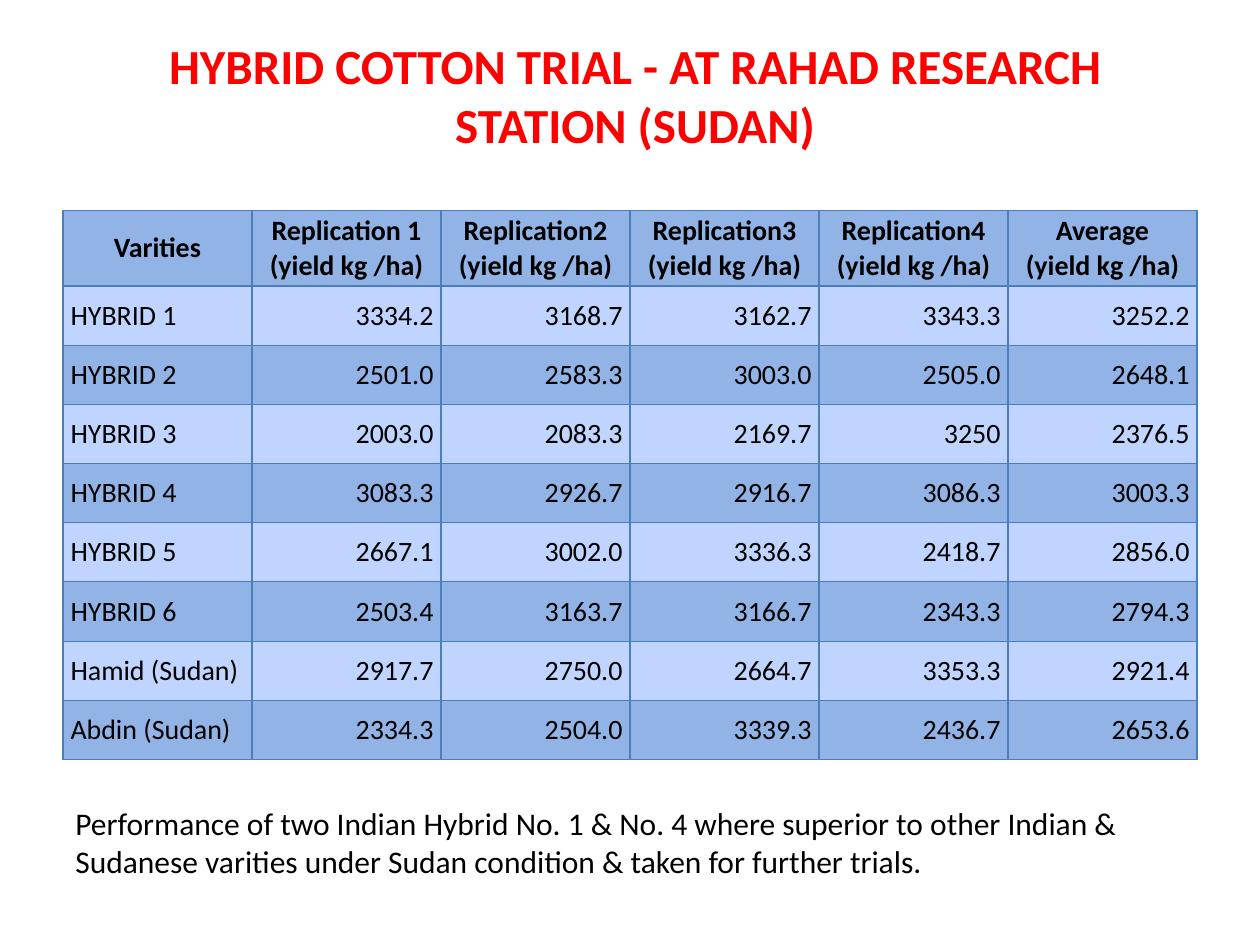
from lxml.etree import SubElement
from pptx import Presentation
from pptx.dml.color import RGBColor
from pptx.enum.text import MSO_ANCHOR as Anchor, MSO_AUTO_SIZE as AutoSize, PP_ALIGN as Align
from pptx.oxml.ns import qn
from pptx.util import Inches, Pt

TITLE = "HYBRID COTTON TRIAL - AT RAHAD RESEARCH STATION (SUDAN)"
CONCLUSION = (
    "Performance of two Indian Hybrid No. 1 & No. 4 where superior to other Indian & "
    "Sudanese varities under Sudan condition & taken for further trials."
)
UNIT = "(yield kg /ha)"
MEASURES = ["Replication 1", "Replication2", "Replication3", "Replication4", "Average"]
HEADER = ["Varities"] + [f"{measure}\v{UNIT}" for measure in MEASURES]
YIELDS = [
    ("HYBRID 1", "3334.2", "3168.7", "3162.7", "3343.3", "3252.2"),
    ("HYBRID 2", "2501.0", "2583.3", "3003.0", "2505.0", "2648.1"),
    ("HYBRID 3", "2003.0", "2083.3", "2169.7", "3250", "2376.5"),
    ("HYBRID 4", "3083.3", "2926.7", "2916.7", "3086.3", "3003.3"),
    ("HYBRID 5", "2667.1", "3002.0", "3336.3", "2418.7", "2856.0"),
    ("HYBRID 6", "2503.4", "3163.7", "3166.7", "2343.3", "2794.3"),
    ("Hamid (Sudan)", "2917.7", "2750.0", "2664.7", "3353.3", "2921.4"),
    ("Abdin (Sudan)", "2334.3", "2504.0", "3339.3", "2436.7", "2653.6"),
]
BLACK, RED, BORDER = "000000", "FF0000", "4B7EBC"
BANDS = ["92B3E5", "BFD5FF"]
HEADER_HEIGHT, ROW_HEIGHT, COLUMN_WIDTH = 0.6, 0.47, 1.5


def set_paragraph(paragraph, size, color, bold=False, align=Align.LEFT):
    paragraph.alignment = align
    font = paragraph.font
    font.name, font.size, font.bold = "Calibri", Pt(size), bold
    font.color.rgb = RGBColor.from_string(color)


def add_borders(cell):
    properties = cell._tc.get_or_add_tcPr()
    for side in ("a:lnL", "a:lnR", "a:lnT", "a:lnB"):
        line = SubElement(properties, qn(side), w=str(Pt(0.75)))
        SubElement(SubElement(line, qn("a:solidFill")), qn("a:srgbClr"), val=BORDER)


def add_yield_table(slide):
    rows = [HEADER] + YIELDS
    heights = [HEADER_HEIGHT] + [ROW_HEIGHT] * len(YIELDS)
    table = slide.shapes.add_table(
        len(rows), len(HEADER), Inches(0.5), Inches(1.67),
        Inches(COLUMN_WIDTH * len(HEADER)), Inches(sum(heights)),
    ).table
    for column in table.columns:
        column.width = Inches(COLUMN_WIDTH)
    for r, (values, height) in enumerate(zip(rows, heights)):
        table.rows[r].height = Inches(height)
        for c, value in enumerate(values):
            cell = table.cell(r, c)
            cell.text = value
            cell.vertical_anchor = Anchor.MIDDLE
            cell.margin_left = cell.margin_right = Inches(0.06)
            cell.margin_top = cell.margin_bottom = Inches(0.03)
            align = Align.CENTER if r == 0 else Align.LEFT if c == 0 else Align.RIGHT
            set_paragraph(cell.text_frame.paragraphs[0], 16, BLACK, r == 0, align)
            add_borders(cell)
            cell.fill.solid()
            cell.fill.fore_color.rgb = RGBColor.from_string(BANDS[r % 2])


def main():
    deck = Presentation()
    deck.slide_width, deck.slide_height = Inches(10), Inches(7.5)
    slide = deck.slides.add_slide(deck.slide_layouts[5])

    title = slide.shapes.title
    title.left, title.top = Inches(0.75), Inches(0.23)
    title.width, title.height = Inches(8.58), Inches(1.04)

    add_yield_table(slide)

    conclusion = slide.shapes.add_textbox(Inches(0.5), Inches(6.33), Inches(9), Inches(0.71))

    for box, text in ((title, TITLE), (conclusion, CONCLUSION)):
        frame = box.text_frame
        frame.text = text
        frame.word_wrap = True
        frame.auto_size = AutoSize.SHAPE_TO_FIT_TEXT
        frame.vertical_anchor = Anchor.TOP
    set_paragraph(title.text_frame.paragraphs[0], 28, RED, True, Align.CENTER)
    set_paragraph(conclusion.text_frame.paragraphs[0], 18, BLACK)

    deck.save("out.pptx")


if __name__ == "__main__":
    main()
